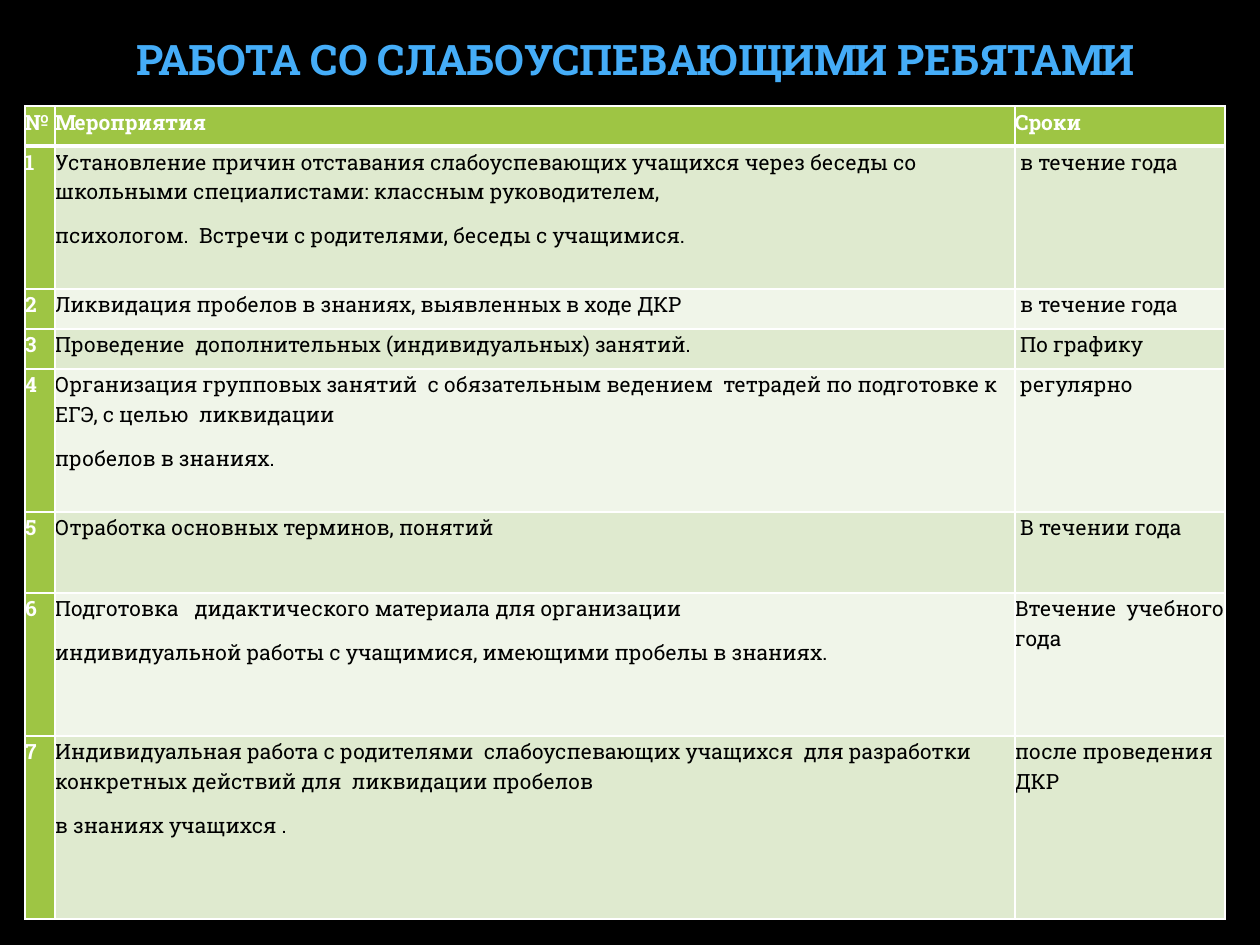
from lxml.etree import SubElement
from pptx import Presentation
from pptx.dml.color import RGBColor
from pptx.enum.text import MSO_ANCHOR, PP_ALIGN
from pptx.oxml.ns import qn
from pptx.util import Emu, Pt

PX_PER_INCH = 126
FONT = "Roboto Slab"
WHITE, BLACK, BLUE = "FFFFFF", "000000", "45ADF8"
GREEN, BAND_DARK, BAND_LIGHT = "9EC544", "DFEACF", "F0F5E9"

COLUMN_WIDTHS = [30, 960, 210]
ROW_HEIGHTS = [40, 143, 40, 40, 143, 81, 143, 183]
HEADINGS = ("№", "Мероприятия", "Сроки")
ACTIVITIES = [
    ("Установление причин отставания слабоуспевающих учащихся через беседы со "
     "школьными специалистами: классным руководителем,\n"
     "психологом.  Встречи с родителями, беседы с учащимися.",
     " в течение года"),
    ("Ликвидация пробелов в знаниях, выявленных в ходе ДКР", " в течение года"),
    ("Проведение  дополнительных (индивидуальных) занятий.", " По графику"),
    ("Организация групповых занятий  с обязательным ведением  тетрадей по "
     "подготовке к ЕГЭ, с целью  ликвидации\nпробелов в знаниях.",
     " регулярно"),
    ("Отработка основных терминов, понятий", " В течении года"),
    ("Подготовка   дидактического материала для организации\n"
     "индивидуальной работы с учащимися, имеющими пробелы в знаниях.",
     "Втечение  учебного года"),
    ("Индивидуальная работа с родителями  слабоуспевающих учащихся  для "
     "разработки конкретных действий для  ликвидации пробелов\n"
     "в знаниях учащихся .",
     "после проведения ДКР"),
]


def px(length):
    return Emu(round(length * 914400 / PX_PER_INCH))


def color(value):
    return RGBColor.from_string(value)


def format_text(frame, size, ink, bold, spacing, after=0, align=PP_ALIGN.LEFT):
    for paragraph in frame.paragraphs:
        paragraph.alignment = align
        paragraph.line_spacing = spacing
        paragraph.space_after = Pt(after)
        for run in paragraph.runs:
            run.font.name = FONT
            run.font.size = Pt(size)
            run.font.bold = bold
            run.font.color.rgb = color(ink)


def add_title(slide, text):
    title = slide.shapes.add_textbox(px(37), px(18), px(1197), px(88))
    frame = title.text_frame
    frame.word_wrap = True
    frame.vertical_anchor = MSO_ANCHOR.MIDDLE
    frame.text = text
    format_text(frame, 24, BLUE, True, 0.9, align=PP_ALIGN.CENTER)


def add_borders(cell, top, bottom):
    properties = cell._tc.get_or_add_tcPr()
    for side, width in (("L", 1), ("R", 1), ("T", top), ("B", bottom)):
        line = SubElement(properties, qn(f"a:ln{side}"), w=str(Pt(width)))
        fill = SubElement(line, qn("a:solidFill"))
        SubElement(fill, qn("a:srgbClr"), val=WHITE)


def fill_cell(cell, text, row, column):
    accent = row == 0 or column == 0
    cell.margin_left = cell.margin_right = 0
    cell.margin_top = cell.margin_bottom = 0
    add_borders(cell, 3 if row == 1 else 1, 3 if row == 0 else 1)
    band = BAND_DARK if row % 2 else BAND_LIGHT
    cell.fill.solid()
    cell.fill.fore_color.rgb = color(GREEN if accent else band)
    cell.text_frame.text = text
    format_text(cell.text_frame, 12, WHITE if accent else BLACK, accent, 1.07, 8)


def add_plan(slide):
    rows = [HEADINGS]
    rows += [(str(number), *activity) for number, activity in enumerate(ACTIVITIES, 1)]
    plan = slide.shapes.add_table(
        len(rows), len(HEADINGS), px(25), px(106),
        px(sum(COLUMN_WIDTHS)), px(sum(ROW_HEIGHTS))).table
    for column, width in zip(plan.columns, COLUMN_WIDTHS):
        column.width = px(width)
    for row, height in zip(plan.rows, ROW_HEIGHTS):
        row.height = px(height)
    for row, texts in enumerate(rows):
        for column, text in enumerate(texts):
            fill_cell(plan.cell(row, column), text, row, column)


def main():
    presentation = Presentation()
    presentation.slide_width = px(1260)
    presentation.slide_height = px(945)
    slide = presentation.slides.add_slide(presentation.slide_layouts[6])
    slide.background.fill.solid()
    slide.background.fill.fore_color.rgb = color(BLACK)
    add_title(slide, "РАБОТА СО СЛАБОУСПЕВАЮЩИМИ РЕБЯТАМИ")
    add_plan(slide)
    presentation.save("out.pptx")


if __name__ == "__main__":
    main()
